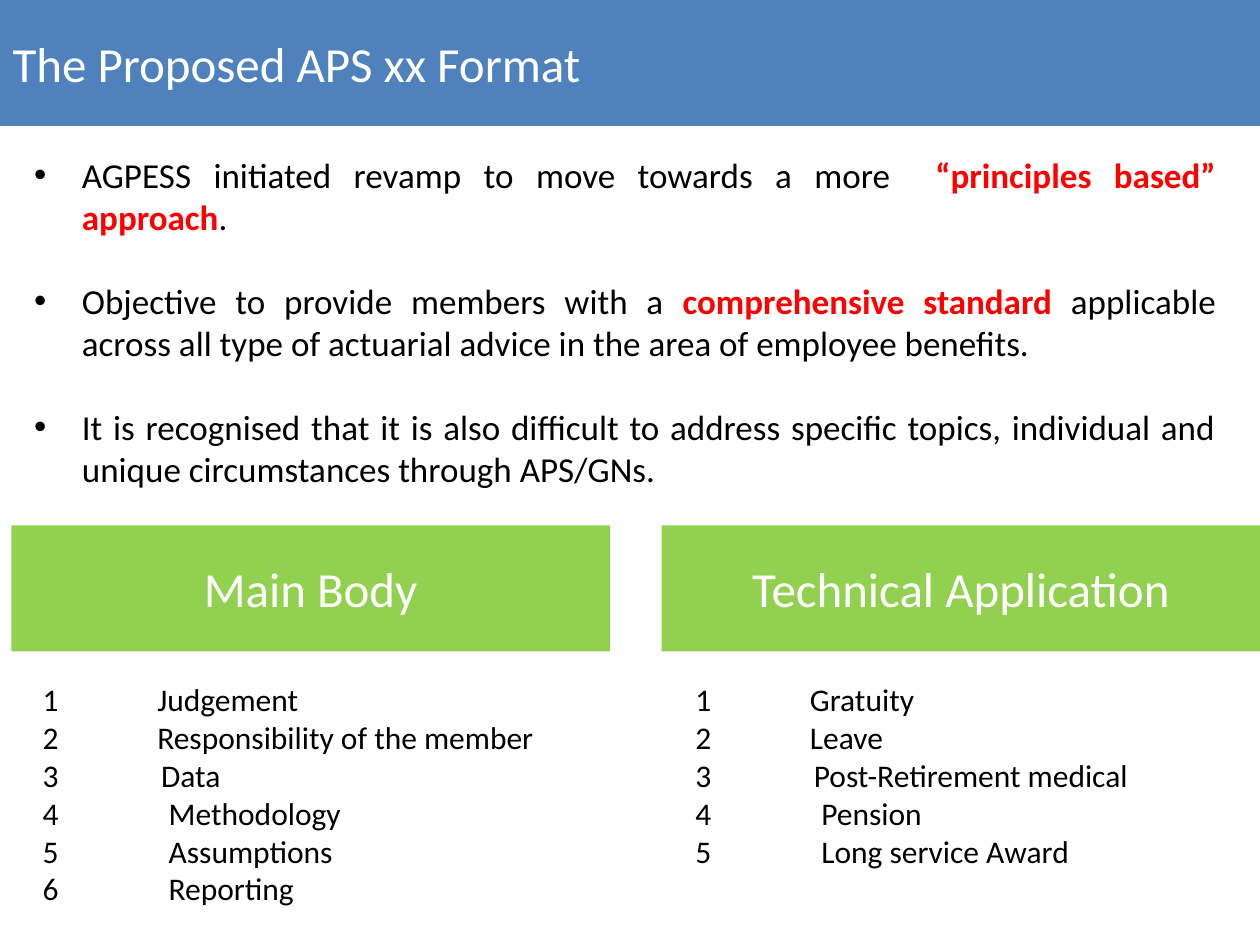
from lxml.etree import SubElement
from pptx import Presentation
from pptx.dml.color import RGBColor
from pptx.enum.shapes import MSO_SHAPE
from pptx.enum.text import MSO_ANCHOR, MSO_AUTO_SIZE, PP_ALIGN
from pptx.oxml.ns import qn
from pptx.util import Inches, Pt

BLUE = RGBColor(0x4F, 0x81, 0xBD)
GREEN = RGBColor(0x92, 0xD0, 0x50)
RED = RGBColor(0xFF, 0, 0)
BLACK = RGBColor(0, 0, 0)
WHITE = RGBColor(0xFF, 0xFF, 0xFF)

# Each bullet is a list of (text, is emphasised)
BULLETS = [
    [("AGPESS initiated revamp to move towards a more  ", False),
     ("“principles based” approach", True), (".", False)],
    [("Objective to provide members with a ", False),
     ("comprehensive standard ", True),
     ("applicable across all type of actuarial advice in the area of "
      "employee benefits.", False)],
    [("It is recognised that it is also difficult to address specific topics, "
      "individual and unique circumstances through APS/GNs.", False)],
]

# Heading, heading left, list left, list height, items
COLUMNS = [
    ("Main Body", 0.09, 0.24, 1.92,
     ["Judgement", "Responsibility of the member", "Data", "Methodology",
      "Assumptions", "Reporting"]),
    ("Technical Application", 5.25, 5.42, 1.62,
     ["Gratuity", "Leave", "Post-Retirement medical", "Pension",
      "Long service Award"]),
]
ITEM_TABS = [0.91, 0.91, 0.94, 1, 1, 1]


def place(shape, left, top, width, height):
    shape.left, shape.top = Inches(left), Inches(top)
    shape.width, shape.height = Inches(width), Inches(height)


def style(para, size, color, align=PP_ALIGN.LEFT):
    para.alignment = align
    para.font.name = "Calibri"
    para.font.size = Pt(size)
    para.font.color.rgb = color


deck = Presentation()
deck.slide_width, deck.slide_height = Inches(10), Inches(7.5)
page = deck.slides.add_slide(deck.slide_layouts[1])

# Title band
title = page.shapes.title
place(title, 0, 0, 10, 1)
title.fill.solid()
title.fill.fore_color.rgb = BLUE
title.text_frame.text = "The Proposed APS xx Format"
title.text_frame.auto_size = MSO_AUTO_SIZE.NONE
title.text_frame.vertical_anchor = MSO_ANCHOR.MIDDLE
style(title.text_frame.paragraphs[0], 28, WHITE)

# Bullets
body = page.placeholders[1]
place(body, 0.17, 1.17, 9.58, 2.79)
frame = body.text_frame
frame.auto_size = MSO_AUTO_SIZE.NONE
for index, bullet in enumerate(BULLETS):
    para = frame.add_paragraph() if index else frame.paragraphs[0]
    style(para, 20, BLACK, PP_ALIGN.JUSTIFY)
    para.space_before = Pt(24 if index else 0)
    properties = para._p.get_or_add_pPr()
    properties.set("marL", str(Inches(0.38)))
    properties.set("indent", str(-Inches(0.38)))
    for text, emphasised in bullet:
        span = para.add_run()
        span.text = text
        if emphasised:
            span.font.bold = True
            span.font.color.rgb = RED

# Two columns: a heading bar above a numbered list
for heading, bar_left, list_left, list_height, items in COLUMNS:
    bar = page.shapes.add_shape(MSO_SHAPE.RECTANGLE, Inches(bar_left),
                                Inches(4.17), Inches(4.75), Inches(1))
    bar.shadow.inherit = False
    bar.fill.solid()
    bar.fill.fore_color.rgb = GREEN
    bar.line.fill.background()
    bar.text_frame.text = heading
    bar.text_frame.vertical_anchor = MSO_ANCHOR.MIDDLE
    style(bar.text_frame.paragraphs[0], 28, WHITE, PP_ALIGN.CENTER)

    box = page.shapes.add_textbox(Inches(list_left), Inches(5.34),
                                  Inches(4.58), Inches(list_height))
    frame = box.text_frame
    frame.word_wrap = True
    frame.vertical_anchor = MSO_ANCHOR.MIDDLE
    frame.text = "\n".join(f"{number}\t{item}"
                           for number, item in enumerate(items, 1))
    for para, position in zip(frame.paragraphs, ITEM_TABS):
        tabs = SubElement(para._p.get_or_add_pPr(), qn("a:tabLst"))
        SubElement(tabs, qn("a:tab"), pos=str(Inches(position)), algn="l")
        style(para, 18, BLACK)

deck.save("out.pptx")
